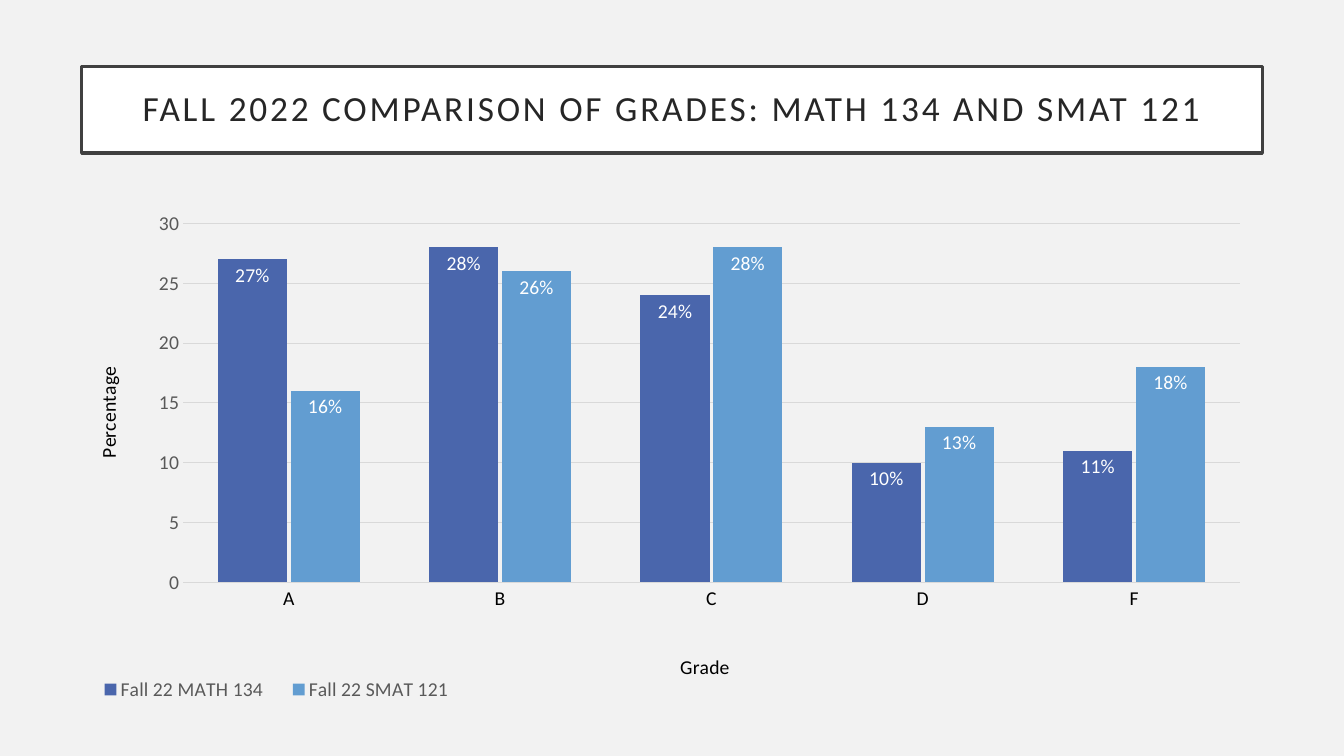
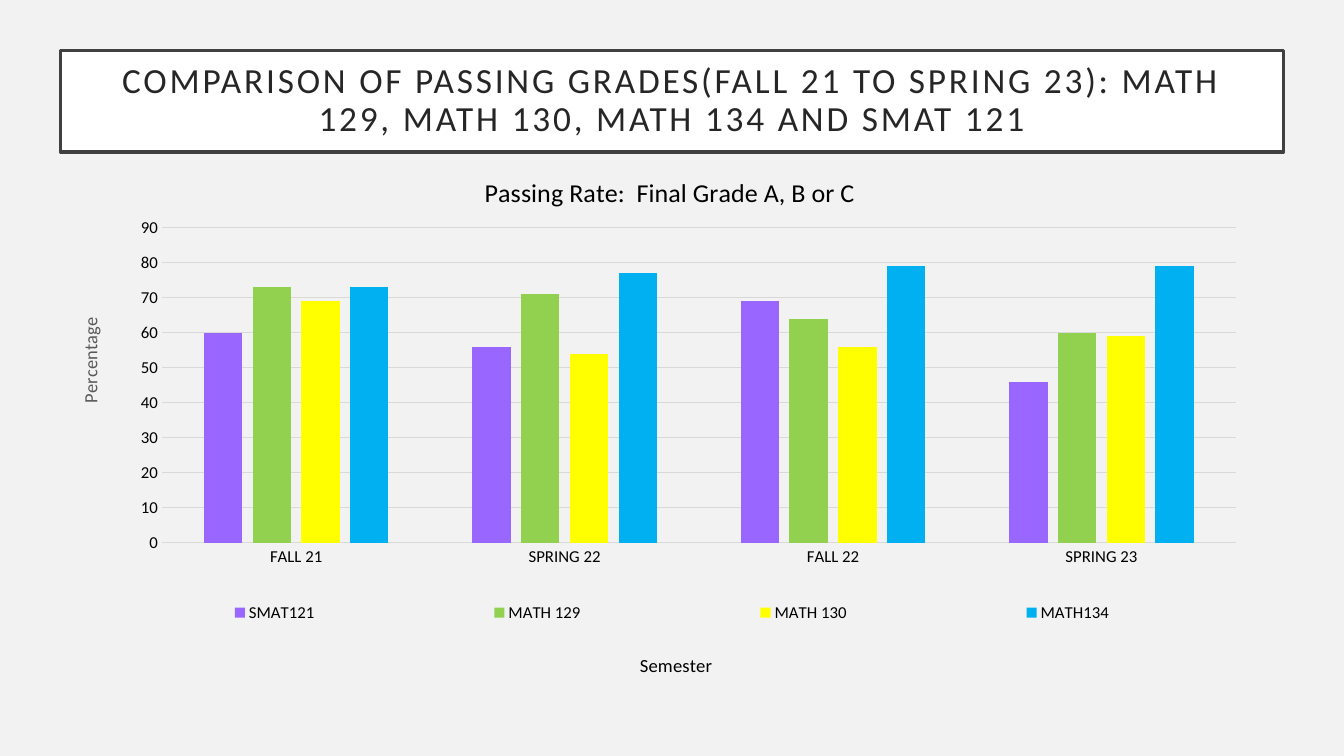
from lxml.etree import SubElement
from pptx import Presentation
from pptx.chart.data import CategoryChartData
from pptx.dml.color import RGBColor
from pptx.enum.chart import XL_CHART_TYPE, XL_LABEL_POSITION, XL_LEGEND_POSITION, XL_TICK_MARK
from pptx.enum.shapes import MSO_SHAPE
from pptx.enum.text import MSO_ANCHOR, PP_ALIGN
from pptx.oxml.ns import qn
from pptx.util import Inches, Pt

FONT = "Calibri"
PAGE, WHITE, BLACK = "F2F2F2", "FFFFFF", "000000"
FRAME, HEADING, MUTED, GRID = "404040", "262626", "595959", "D9D9D9"


def color(value):
    return RGBColor.from_string(value)


def style_font(font, size, tint):
    font.name = FONT
    font.size = Pt(size)
    font.bold = False
    font.color.rgb = color(tint)


def add_page(deck):
    page = deck.slides.add_slide(deck.slide_layouts[6])
    page.background.fill.solid()
    page.background.fill.fore_color.rgb = color(PAGE)
    return page


def add_title(page, box, text):
    banner = page.shapes.add_shape(MSO_SHAPE.RECTANGLE, *map(Inches, box))
    banner.shadow.inherit = False
    banner.fill.solid()
    banner.fill.fore_color.rgb = color(WHITE)
    banner.line.color.rgb = color(FRAME)
    banner.line.width = Pt(2.5)
    frame = banner.text_frame
    frame.word_wrap = True
    frame.vertical_anchor = MSO_ANCHOR.MIDDLE
    for side in ("left", "top", "right", "bottom"):
        setattr(frame, f"margin_{side}", Inches(0.2))
    para = frame.paragraphs[0]
    para.text = text
    para.alignment = PP_ALIGN.CENTER
    para.line_spacing = 0.9
    span = para.runs[0]
    style_font(span.font, 25.2, HEADING)
    span.font._element.set("spc", "200")


def set_layout(element, after, inner=False, **places):
    """Place a chart part by fractions of the chart: x, y and maybe w, h."""
    for old in element.findall(qn("c:layout")):
        element.remove(old)
    layout = element.makeelement(qn("c:layout"))
    manual = SubElement(layout, qn("c:manualLayout"))
    if inner:
        SubElement(manual, qn("c:layoutTarget")).set("val", "inner")
    for name in ("x", "y"):
        SubElement(manual, qn(f"c:{name}Mode")).set("val", "edge")
    for name, value in places.items():
        SubElement(manual, qn(f"c:{name}")).set("val", str(value))
    if after:
        element.find(qn(after)).addnext(layout)
    else:
        element.insert(0, layout)


def write_chart_title(title, text, size, tint, x, y, upright=False):
    frame = title.text_frame
    frame.text = text
    style_font(frame.paragraphs[0].runs[0].font, size, tint)
    if upright:
        frame._txBody.bodyPr.set("rot", "-5400000")
    set_layout(title._element, "c:tx", x=x, y=y)


def style_axis(axis, size, tint):
    axis.major_tick_mark = axis.minor_tick_mark = XL_TICK_MARK.NONE
    style_font(axis.tick_labels.font, size, tint)


def add_columns(page, box, categories, series, size, value_tint, legend_tint, top, step, gap, overlap, plot, legend):
    """Add a column chart; series holds (name, colour, values)."""
    data = CategoryChartData()
    data.categories = categories
    for name, _, values in series:
        data.add_series(name, values)
    chart = page.shapes.add_chart(XL_CHART_TYPE.COLUMN_CLUSTERED, *map(Inches, box), data).chart
    style_font(chart.font, size, BLACK)
    chart.has_title = False

    columns = chart.plots[0]
    columns.gap_width, columns.overlap = gap, overlap
    columns.vary_by_categories = False
    for column, (_, tint, _) in zip(columns.series, series):
        column.format.fill.solid()
        column.format.fill.fore_color.rgb = color(tint)

    style_axis(chart.category_axis, size, BLACK)
    style_axis(chart.value_axis, size, value_tint)
    values = chart.value_axis
    values.minimum_scale, values.maximum_scale, values.major_unit = 0, top, step
    values.format.line.fill.background()
    for line in (chart.category_axis.format.line, values.major_gridlines.format.line):
        line.color.rgb = color(GRID)
        line.width = Pt(0.75)

    chart.has_legend = True
    chart.legend.position = XL_LEGEND_POSITION.BOTTOM
    chart.legend.include_in_layout = False
    style_font(chart.legend.font, size, legend_tint)
    set_layout(chart.legend._element, "c:legendPos", **legend)
    set_layout(chart._chartSpace.chart.plotArea, None, inner=True, **plot)
    return chart


def label_columns(chart, size):
    for column in chart.plots[0].series:
        labels = column.data_labels
        labels.show_value = True
        labels.position = XL_LABEL_POSITION.INSIDE_END
        labels.number_format = '0"%"'
        labels.number_format_is_linked = False
        style_font(labels.font, size, WHITE)


def build_grades(deck):
    page = add_page(deck)
    left, width = 0.81, 11.71
    add_title(page, (left, 0.66, width, 0.86), "FALL 2022 COMPARISON OF GRADES: MATH 134 AND SMAT 121")
    series = [
        ("Fall 22 MATH 134", "4A66AC", (27, 28, 24, 10, 11)),
        ("Fall 22 SMAT 121", "629DD1", (16, 26, 28, 13, 18)),
    ]
    chart = add_columns(
        page, (left, 2, width, 5.07), list("ABCDF"), series, size=14,
        value_tint=MUTED, legend_tint=MUTED, top=30, step=5, gap=100, overlap=-5,
        plot={"x": 0.086, "y": 0.043, "w": 0.895, "h": 0.702},
        legend={"x": 0, "y": 0.92, "w": 0.33, "h": 0.07},
    )
    label_columns(chart, 14)
    write_chart_title(chart.category_axis.axis_title, "Grade", 14, BLACK, 0.504, 0.876)
    write_chart_title(chart.value_axis.axis_title, "Percentage", 14, BLACK, 0.008, 0.316, upright=True)


def build_passing_rates(deck):
    page = add_page(deck)
    left, width = 0.6, 12.13
    add_title(
        page, (left, 0.5, width, 1.01),
        "COMPARISON OF PASSING GRADES(FALL 21 TO SPRING 23): MATH 129, MATH 130, MATH 134 AND SMAT 121",
    )
    series = [
        ("SMAT121", "9966FF", (60, 56, 69, 46)),
        ("MATH 129", "92D050", (73, 71, 64, 60)),
        ("MATH 130", "FFFF00", (69, 54, 56, 59)),
        ("MATH134", "00B0F0", (73, 77, 79, 79)),
    ]
    chart = add_columns(
        page, (left, 1.52, width, 5.26), ["FALL 21", "SPRING 22", "FALL 22", "SPRING 23"], series, size=12,
        value_tint=BLACK, legend_tint=BLACK, top=90, step=10, gap=219, overlap=-27,
        plot={"x": 0.083, "y": 0.142, "w": 0.878, "h": 0.6},
        legend={"x": 0, "y": 0.84, "w": 1, "h": 0.07},
    )
    chart.has_title = True
    write_chart_title(chart.chart_title, "Passing Rate:  Final Grade A, B or C", 18.6, BLACK, 0.343, 0.032)
    write_chart_title(chart.category_axis.axis_title, "Semester", 13.3, BLACK, 0.471, 0.945)
    write_chart_title(chart.value_axis.axis_title, "Percentage", 13.3, MUTED, 0.011, 0.307, upright=True)


def main():
    deck = Presentation()
    deck.slide_width, deck.slide_height = Inches(13.33), Inches(7.5)
    build_grades(deck)
    build_passing_rates(deck)
    deck.save("out.pptx")


if __name__ == "__main__":
    main()
